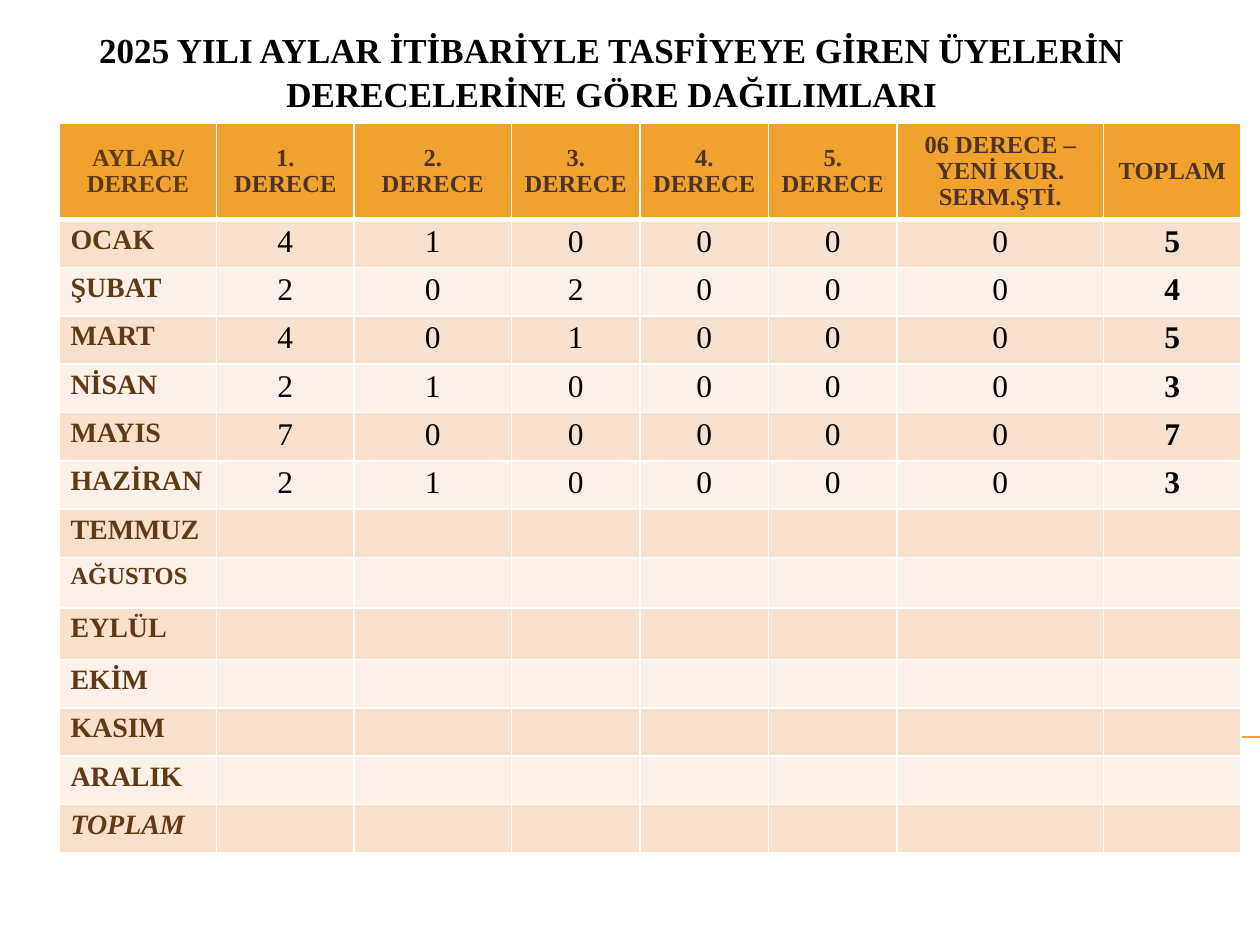
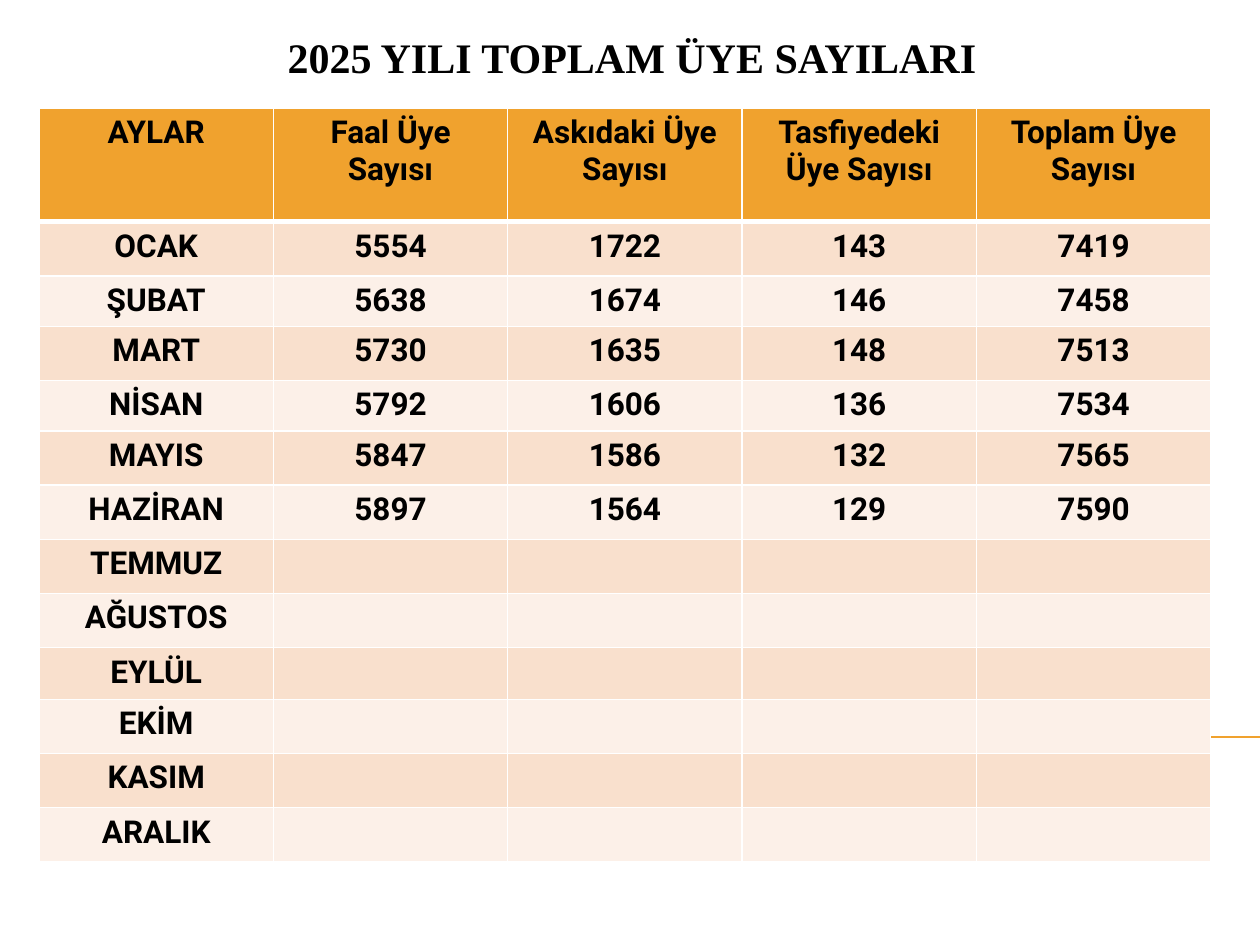
from dataclasses import dataclass

from lxml.etree import SubElement
from pptx import Presentation
from pptx.dml.color import RGBColor as Color
from pptx.enum.shapes import MSO_CONNECTOR as Connector
from pptx.enum.text import MSO_ANCHOR as Anchor, PP_ALIGN as Align
from pptx.oxml import parse_xml
from pptx.oxml.ns import nsdecls, qn
from pptx.util import Inches, Pt


@dataclass(frozen=True)
class Theme:
    serif: str = "Times New Roman"
    sans: str = "Roboto"
    black: str = "000000"
    white: str = "FFFFFF"
    orange: str = "F0A22E"
    brown: str = "603A14"
    dark_brown: str = "523227"
    bands: tuple = ("F9E0CD", "FCF0E8")
    title: int = 20
    large_title: int = 24
    body: int = 18
    month: int = 16
    small: int = 14
    rule: float = 0.75
    border: int = 1
    header_border: int = 3


theme = Theme()


def write(frame, text, font=theme.serif, size=theme.body, color=theme.black, bold=True,
          italic=False, align=Align.CENTER, spacing=None):
    frame.word_wrap = True
    for index, line in enumerate(text.split("\n")):
        paragraph = frame.paragraphs[0] if index == 0 else frame.add_paragraph()
        paragraph.text = line
        paragraph.alignment = align
        paragraph.line_spacing = spacing
        for run in paragraph.runs:
            run.font.name, run.font.size = font, Pt(size)
            run.font.bold, run.font.italic = bold, italic
            run.font.color.rgb = Color.from_string(color)
        if not line:
            SubElement(paragraph._p, qn("a:endParaRPr"), sz=str(size * 100))


def style_cell(cell, fill, margins, bottom):
    cell.margin_left = cell.margin_right = Inches(margins[0])
    cell.margin_top = cell.margin_bottom = Inches(margins[1])
    properties = cell._tc.get_or_add_tcPr()
    widths = {"L": theme.border, "R": theme.border, "T": theme.border, "B": bottom}
    for index, (side, width) in enumerate(widths.items()):
        properties.insert(index, parse_xml(
            f'<a:ln{side} {nsdecls("a")} w="{Pt(width)}"><a:solidFill>'
            f'<a:srgbClr val="{theme.white}"/></a:solidFill></a:ln{side}>'))
    cell.fill.solid()
    cell.fill.fore_color.rgb = Color.from_string(fill)


presentation = Presentation()
presentation.slide_width, presentation.slide_height = Inches(10), Inches(7.5)
column = presentation.slide_width / 100
row = presentation.slide_height / 75

months = ["OCAK", "ŞUBAT", "MART", "NİSAN", "MAYIS", "HAZİRAN",
          "TEMMUZ", "AĞUSTOS", "EYLÜL", "EKİM", "KASIM", "ARALIK"]

degree_headers = ["AYLAR/ DERECE", "1.\nDERECE", "2.\vDERECE", "3. DERECE", "4. DERECE",
                  "5. DERECE", "06 DERECE – YENİ KUR. SERM.ŞTİ.", "TOPLAM"]
degree_counts = [(4, 1, 0, 0, 0, 0), (2, 0, 2, 0, 0, 0), (4, 0, 1, 0, 0, 0),
                 (2, 1, 0, 0, 0, 0), (7, 0, 0, 0, 0, 0), (2, 1, 0, 0, 0, 0)]
member_headers = ["AYLAR", "Faal Üye Sayısı", "Askıdaki Üye Sayısı",
                  "Tasfiyedeki Üye Sayısı", "Toplam Üye Sayısı"]
member_counts = [(5554, 1722, 143), (5638, 1674, 146), (5730, 1635, 148),
                 (5792, 1606, 136), (5847, 1586, 132), (5897, 1564, 129)]

month_height = (57.9 - 7.6 - 4 - 4.1) / 11
degree_heights = [7.6] + [month_height] * 7 + [4, 4.1] + [month_height] * 4
member_heights = [9, 4.3, 3.9, 4.3, 3.9] + [4.3] * 3 + [4.3, 4.1] + [4.3] * 3

pages = [
    dict(title="2025 YILI AYLAR İTİBARİYLE TASFİYEYE GİREN ÜYELERİN DERECELERİNE GÖRE DAĞILIMLARI",
         title_box=(2.3, 1.6, 92.5, 6.3), title_size=theme.title, title_anchor=Anchor.TOP,
         title_spacing=1.05, origin=(4.7, 9.8), margins=(0.09, 0.04),
         widths=[12.5, 10.9, 12.5, 10.2, 10.2, 10.2, 16.4, 10.9], heights=degree_heights,
         headers=degree_headers, labels=months + ["TOPLAM"], counts=degree_counts,
         by_degree=True),
    dict(title="2025 YILI TOPLAM ÜYE SAYILARI",
         title_box=(3.9, 2.3, 92.5, 4.7), title_size=theme.large_title,
         title_anchor=Anchor.BOTTOM, title_spacing=None, origin=(3.1, 8.6),
         margins=(0.1, 0.05), widths=[18.6] * 5, heights=member_heights,
         headers=member_headers, labels=months, counts=member_counts, by_degree=False),
]

for page in pages:
    slide = presentation.slides.add_slide(presentation.slide_layouts[6])
    rule = slide.shapes.add_connector(Connector.STRAIGHT, int(5.6 * column), int(58.5 * row),
                                      int(100 * column), int(58.5 * row))
    rule.line.color.rgb = Color.from_string(theme.orange)
    rule.line.width = Pt(theme.rule)
    SubElement(rule._element.spPr, qn("a:effectLst"))

    left, top, width, height = page["title_box"]
    title = slide.shapes.add_textbox(int(left * column), int(top * row),
                                     int(width * column), int(height * row))
    title.text_frame.vertical_anchor = page["title_anchor"]
    write(title.text_frame, page["title"], size=page["title_size"],
          spacing=page["title_spacing"])

    left, top = page["origin"]
    widths, heights = page["widths"], page["heights"]
    table = slide.shapes.add_table(len(heights), len(widths), int(left * column),
                                   int(top * row), int(sum(widths) * column),
                                   int(sum(heights) * row)).table
    for index, width in enumerate(widths):
        table.columns[index].width = int(width * column)
    for index, height in enumerate(heights):
        table.rows[index].height = int(height * row)

    by_degree = page["by_degree"]
    for index, header in enumerate(page["headers"]):
        cell = table.cell(0, index)
        style_cell(cell, theme.orange, page["margins"], theme.header_border)
        if by_degree:
            cell.vertical_anchor = Anchor.MIDDLE
            write(cell.text_frame, header, size=theme.small, spacing=0.96,
                  color=theme.dark_brown if index else theme.brown)
        else:
            write(cell.text_frame, header, font=theme.sans)

    for number, label in enumerate(page["labels"]):
        counts = page["counts"][number] if number < len(page["counts"]) else ()
        values = [*counts, sum(counts)] if counts else [""] * (len(widths) - 1)
        for index, value in enumerate([label, *values]):
            cell = table.cell(number + 1, index)
            style_cell(cell, theme.bands[number % 2], page["margins"], theme.border)
            if not by_degree:
                write(cell.text_frame, str(value), font=theme.sans)
            elif index == 0:
                write(cell.text_frame, label, color=theme.brown, align=Align.LEFT,
                      size=theme.small if label == "AĞUSTOS" else theme.month,
                      italic=label == "TOPLAM")
            else:
                write(cell.text_frame, str(value), bold=index == len(widths) - 1)

presentation.save("out.pptx")
